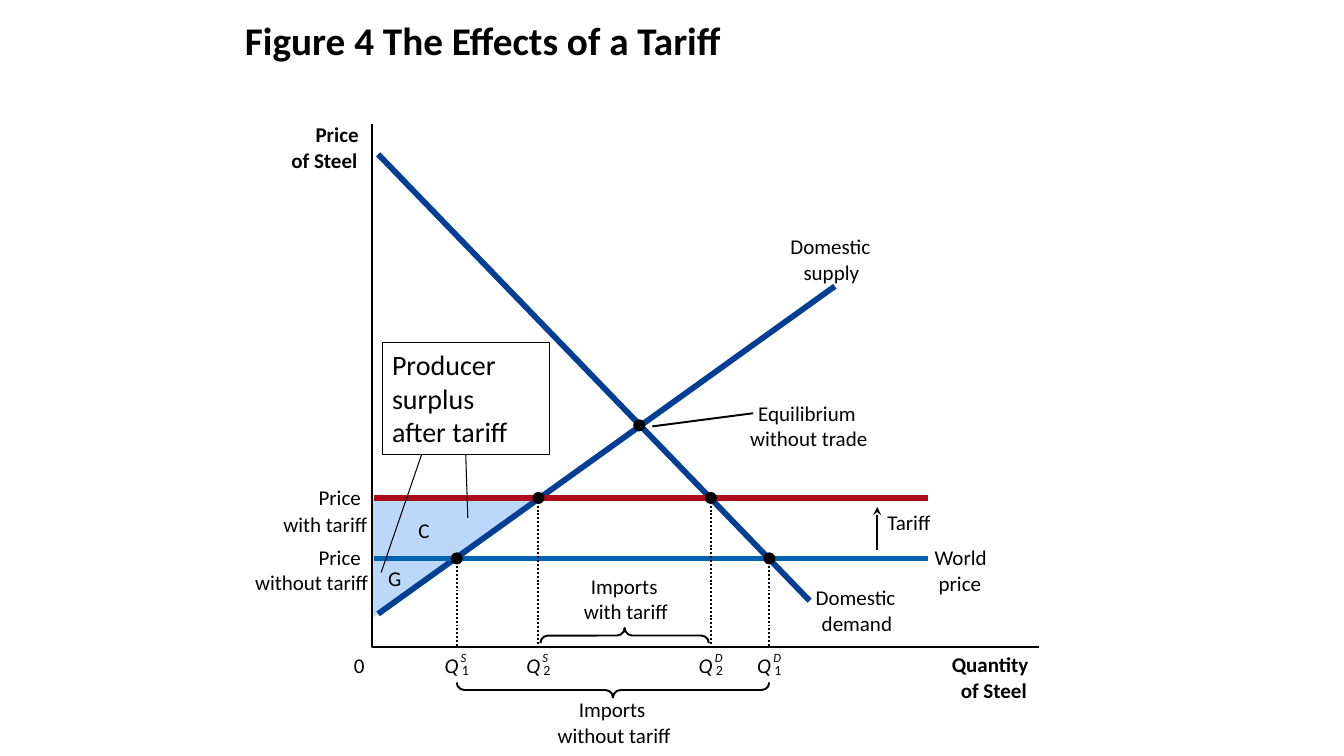
from dataclasses import dataclass

from lxml import etree
from pptx import Presentation
from pptx.dml.color import RGBColor
from pptx.enum.dml import MSO_LINE
from pptx.enum.shapes import MSO_CONNECTOR, MSO_SHAPE
from pptx.enum.text import MSO_ANCHOR, MSO_AUTO_SIZE, PP_ALIGN
from pptx.oxml.ns import qn
from pptx.util import Inches, Pt

STRAIGHT = MSO_CONNECTOR.STRAIGHT
DOTTED = MSO_LINE.ROUND_DOT
LEFT_BRACE, OVAL, RECT = MSO_SHAPE.LEFT_BRACE, MSO_SHAPE.OVAL, MSO_SHAPE.RECTANGLE
TOP, MIDDLE = MSO_ANCHOR.TOP, MSO_ANCHOR.MIDDLE
GROW, NO_FIT = MSO_AUTO_SIZE.SHAPE_TO_FIT_TEXT, MSO_AUTO_SIZE.NONE
LEFT = PP_ALIGN.LEFT


@dataclass(frozen=True)
class Theme:
    font: str = "Calibri"
    black: RGBColor = RGBColor(0x00, 0x00, 0x00)
    white: RGBColor = RGBColor(0xFF, 0xFF, 0xFF)
    curve: RGBColor = RGBColor(0x00, 0x3F, 0x95)
    tariff: RGBColor = RGBColor(0xAD, 0x0D, 0x1B)
    world: RGBColor = RGBColor(0x00, 0x63, 0xB1)
    surplus: RGBColor = RGBColor(0xBB, 0xD8, 0xF9)
    title: float = 28
    callout: float = 20
    label: float = 15
    subscript: float = 10
    superscript: float = 9
    thick: float = 4.13
    thin: float = 1.38
    hairline: float = 0.75


THEME = Theme()
AXIS_X, AXIS_Y = 3.69, 6.42
TARIFF_Y, WORLD_Y = 4.94, 5.54
LINE_START, LINE_END = 3.71, 9.2
EQUILIBRIUM = (6.34, 4.22)
QUANTITIES = [
    (4.53, WORLD_Y, "S", "1"),
    (5.34, TARIFF_Y, "S", "2"),
    (7.05, TARIFF_Y, "D", "2"),
    (7.63, WORLD_Y, "D", "1"),
]
AXIS_LABELS = [
    (3.13, 1.21, 0.43, "Price"),
    (2.89, 1.46, 0.66, "of Steel"),
    (9.44, 6.46, 0.77, "Quantity"),
    (9.53, 6.72, 0.66, "of Steel"),
]
LABELS = [
    (4.15, 5.13, 0.11, "C"),
    (3.85, 5.61, 0.13, "G"),
    (3.51, 6.47, 0.11, "0"),
    (7.84, 2.32, 0.8, "Domestic"),
    (7.97, 2.57, 0.56, "supply"),
    (8.09, 5.8, 0.8, "Domestic"),
    (8.15, 6.06, 0.7, "demand"),
    (3.16, 4.81, 0.43, "Price"),
    (2.81, 5.07, 0.85, "with tariff"),
    (3.16, 5.4, 0.43, "Price"),
    (2.53, 5.65, 1.14, "without tariff"),
    (8.8, 5.05, 0.45, "Tariff"),
    (9.27, 5.4, 0.52, "World"),
    (9.31, 5.66, 0.43, "price"),
    (7.52, 3.97, 0.98, "Equilibrium"),
    (7.44, 4.22, 1.19, "without trade"),
    (5.86, 5.69, 0.69, "Imports"),
    (5.79, 5.94, 0.85, "with tariff"),
    (5.74, 6.91, 0.69, "Imports"),
    (5.53, 7.17, 1.14, "without tariff"),
]


def add_run(p, text, size, bold=False, italic=False):
    r = p.add_run()
    r.text = text
    r.font.name = THEME.font
    r.font.size = Pt(size)
    r.font.bold = bold
    r.font.italic = italic
    r.font.color.rgb = THEME.black


def style_shape(sp, fill=None, line=None):
    sp.shadow.inherit = False
    if fill is None:
        sp.fill.background()
    else:
        sp.fill.solid()
        sp.fill.fore_color.rgb = fill
    if line is None:
        sp.line.fill.background()
    else:
        sp.line.color.rgb = THEME.black
        sp.line.width = Pt(line)


def add_title(s, text):
    sp = s.shapes.title
    sp.left, sp.top, sp.width, sp.height = (Inches(v) for v in (2.33, 0.06, 9, 0.75))
    tf = sp.text_frame
    tf.vertical_anchor = MIDDLE
    tf.auto_size = NO_FIT
    p = tf.paragraphs[0]
    p.alignment = LEFT
    p.line_spacing = 0.8
    add_run(p, text, THEME.title, bold=True)


def add_label(s, x, y, w, text, size=THEME.label, bold=False, italic=False):
    h = size / 60
    tf = s.shapes.add_textbox(Inches(x), Inches(y), Inches(w), Inches(h)).text_frame
    tf.margin_left = tf.margin_right = tf.margin_top = tf.margin_bottom = 0
    tf.word_wrap = False
    tf.auto_size = GROW
    add_run(tf.paragraphs[0], text, size, bold, italic)


def add_line(s, start, end, width, color=THEME.black, dash=None, arrow=False):
    points = [Inches(v) for v in (*start, *end)]
    sp = s.shapes.add_connector(STRAIGHT, *points)
    sp.line.color.rgb = color
    sp.line.width = Pt(width)
    if dash is not None:
        sp.line.dash_style = dash
    if arrow:
        etree.SubElement(sp.line._get_or_add_ln(), qn("a:tailEnd"), type="stealth")
    etree.SubElement(sp._element.spPr, qn("a:effectLst"))


def add_outline(s, points, closed, fill=None, line=None):
    scaled = [(Inches(x), Inches(y)) for x, y in points]
    builder = s.shapes.build_freeform(*scaled[0])
    builder.add_line_segments(scaled[1:], close=closed)
    style_shape(builder.convert_to_shape(), fill, line)


def add_dot(s, x, y, size=0.12):
    left, top = Inches(x - size / 2), Inches(y - size / 2)
    sp = s.shapes.add_shape(OVAL, left, top, Inches(size), Inches(size))
    style_shape(sp, fill=THEME.black)


def add_brace(s, x1, x2, y, rotation, depth=0.15):
    span = x2 - x1
    left = (x1 + x2 - depth) / 2
    top = y + (depth - span) / 2
    sp = s.shapes.add_shape(LEFT_BRACE, Inches(left), Inches(top), Inches(depth), Inches(span))
    sp.rotation = rotation
    sp.adjustments[0] = 0.5
    style_shape(sp, line=THEME.thin)


def add_quantity(s, x, y, curve, number):
    add_line(s, (x, y), (x, AXIS_Y), THEME.thin, dash=DOTTED)
    add_dot(s, x, y)
    add_label(s, x - 0.12, 6.47, 0.14, "Q", italic=True)
    add_label(s, x + 0.04, 6.45, 0.07, curve, THEME.superscript, italic=True)
    add_label(s, x + 0.05, 6.56, 0.07, number, THEME.subscript)


def add_callout(s, lines):
    add_line(s, (4.64, 5.14), (4.61, 4.22), THEME.hairline)
    add_line(s, (4.25, 4.31), (3.78, 5.68), THEME.hairline)
    sp = s.shapes.add_shape(RECT, Inches(3.79), Inches(3.4), Inches(1.66), Inches(1.11))
    style_shape(sp, THEME.white, THEME.hairline)
    tf = sp.text_frame
    tf.word_wrap = True
    tf.auto_size = GROW
    tf.vertical_anchor = TOP
    for i, line in enumerate(lines):
        p = tf.add_paragraph() if i else tf.paragraphs[0]
        p.alignment = LEFT
        add_run(p, line, THEME.callout)


def main():
    prs = Presentation()
    prs.slide_width, prs.slide_height = Inches(13.33), Inches(7.5)
    s = prs.slides.add_slide(prs.slide_layouts[5])
    add_title(s, "Figure 4 The Effects of a Tariff")

    surplus = [(5.36, TARIFF_Y), (AXIS_X, TARIFF_Y), (AXIS_X, 6.13)]
    add_outline(s, surplus, True, fill=THEME.surplus)
    axes = [(AXIS_X, 1.23), (AXIS_X, AXIS_Y), (10.3, AXIS_Y)]
    add_outline(s, axes, False, line=THEME.thin)

    add_line(s, (3.75, 6.09), (8.28, 2.84), THEME.thick, THEME.curve)
    add_line(s, (3.75, 1.53), (8.03, 5.96), THEME.thick, THEME.curve)
    for y, color in ((TARIFF_Y, THEME.tariff), (WORLD_Y, THEME.world)):
        add_line(s, (LINE_START, y), (LINE_END, y), THEME.thick, color)
    add_line(s, (8.7, 5.46), (8.7, 5.03), THEME.thin, arrow=True)

    add_dot(s, *EQUILIBRIUM)
    add_line(s, (6.47, 4.23), (7.47, 4.1), THEME.thin)
    for quantity in QUANTITIES:
        add_quantity(s, *quantity)
    add_brace(s, 5.36, 7.03, 6.23, 90)
    add_brace(s, 4.53, 7.63, 6.77, 270)

    for label in AXIS_LABELS:
        add_label(s, *label, bold=True)
    for label in LABELS:
        add_label(s, *label)
    add_callout(s, ["Producer surplus", "after tariff"])
    prs.save("out.pptx")


if __name__ == "__main__":
    main()
